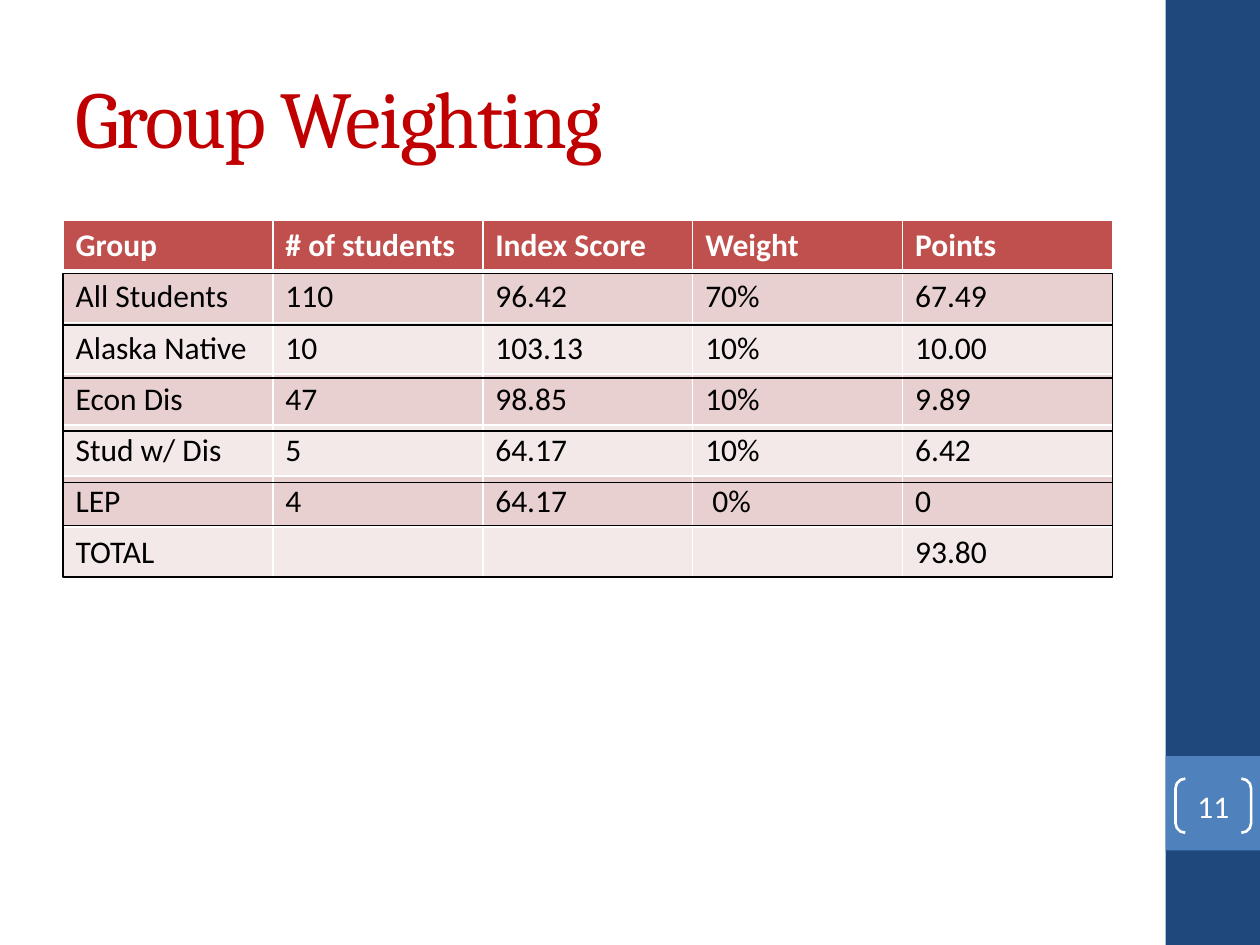
from itertools import pairwise

from lxml.etree import SubElement
from pptx import Presentation
from pptx.dml.color import RGBColor
from pptx.enum.shapes import MSO_SHAPE as Shape
from pptx.enum.text import MSO_ANCHOR as Anchor, PP_ALIGN as Align
from pptx.oxml import parse_xml
from pptx.oxml.ns import nsdecls, qn
from pptx.util import Inches, Pt

WHITE = RGBColor(0xFF, 0xFF, 0xFF)
BLACK = RGBColor(0x00, 0x00, 0x00)
NAVY = RGBColor(0x1F, 0x49, 0x7D)
BLUE = RGBColor(0x4F, 0x81, 0xBD)
TITLE_RED = RGBColor(0xC0, 0x00, 0x00)
HEADER_RED = RGBColor(0xC0, 0x50, 0x4D)
DARK_BAND = RGBColor(0xE8, 0xD0, 0xD0)
LIGHT_BAND = RGBColor(0xF4, 0xE9, 0xE9)

ROWS = [
    ["Group", "# of students", "Index Score", "Weight", "Points"],
    ["All Students", "110", "96.42", "70%", "67.49"],
    ["Alaska Native", "10", "103.13", "10%", "10.00"],
    ["Econ Dis", "47", "98.85", "10%", "9.89"],
    ["Stud w/ Dis", "5", "64.17", "10%", "6.42"],
    ["LEP", "4", "64.17", " 0%", "0"],
    ["TOTAL", "", "", "", "93.80"],
]
FRAME_EDGES = [2.17, 2.58, 3, 3.42, 3.83, 4.17, 4.58]


def style_text(para, font, size, color, bold=False):
    """Format every run of a paragraph."""
    for span in para.runs:
        span.font.name = font
        span.font.size = Pt(size)
        span.font.color.rgb = color
        span.font.bold = bold


def add_box(page, kind, left, top, width, height, fill=None, line=None, weight=0.75):
    """Add a preset shape with an optional fill and outline."""
    box = page.shapes.add_shape(
        kind, Inches(left), Inches(top), Inches(width), Inches(height)
    )
    box.shadow.inherit = False
    if fill is None:
        box.fill.background()
    else:
        box.fill.solid()
        box.fill.fore_color.rgb = fill
    if line is None:
        box.line.fill.background()
    else:
        box.line.color.rgb = line
        box.line.width = Pt(weight)
    return box


def add_sidebar(page, left, top, width, height):
    """Draw the side band and the square behind the page number."""
    add_box(page, Shape.RECTANGLE, left, top, width, height, NAVY)
    add_box(page, Shape.RECTANGLE, left, top + 6, width, width, BLUE)


def add_title(page, left, top, width, height):
    """Write the slide title."""
    box = page.shapes.add_textbox(
        Inches(left), Inches(top), Inches(width), Inches(height)
    )
    frame = box.text_frame
    frame.word_wrap = True
    frame.vertical_anchor = Anchor.MIDDLE
    frame.text = "Group Weighting"
    para = frame.paragraphs[0]
    style_text(para, "Cambria", 46, TITLE_RED)
    para.runs[0].font._element.set("spc", "-100")


def set_borders(cell, bottom):
    """Give a cell white borders, with its own bottom width in points."""
    properties = cell._tc.get_or_add_tcPr()
    widths = {"lnL": 1, "lnR": 1, "lnT": 1, "lnB": bottom}
    for index, (side, width) in enumerate(widths.items()):
        line = parse_xml(f'<a:{side} {nsdecls("a")} w="{Pt(width)}"/>')
        fill = SubElement(line, qn("a:solidFill"))
        SubElement(fill, qn("a:srgbClr"), val=str(WHITE))
        properties.insert(index, line)


def add_score_table(page, left, top, width, height):
    """Build the banded table of group scores."""
    table = page.shapes.add_table(
        len(ROWS), len(ROWS[0]),
        Inches(left), Inches(top), Inches(width), Inches(height),
    ).table
    for row, texts in enumerate(ROWS):
        header = row == 0
        band = HEADER_RED if header else DARK_BAND if row % 2 else LIGHT_BAND
        for column, text in enumerate(texts):
            cell = table.cell(row, column)
            cell.fill.solid()
            cell.fill.fore_color.rgb = band
            set_borders(cell, 3 if header else 1)
            if text:
                cell.text_frame.text = text
                color = WHITE if header else BLACK
                style_text(cell.text_frame.paragraphs[0], "Calibri", 18, color, header)


def add_page_number(page, left, top, width, height):
    """Write the page number between brackets."""
    box = add_box(page, Shape.DOUBLE_BRACKET, left, top, width, height, None, WHITE, 1.5)
    box.adjustments[0] = 0.18
    frame = box.text_frame
    frame.margin_left = frame.margin_right = 0
    frame.margin_top = frame.margin_bottom = 0
    frame.vertical_anchor = Anchor.MIDDLE
    frame.text = "11"
    para = frame.paragraphs[0]
    para.alignment = Align.CENTER
    style_text(para, "Calibri", 18, WHITE)


def add_row_frames(page, left, width, edges):
    """Outline each row below the header."""
    for top, bottom in pairwise(edges):
        add_box(page, Shape.RECTANGLE, left, top, width, bottom - top, line=BLACK)


def main():
    """Build and save the slide."""
    deck = Presentation()
    deck.slide_width = Inches(10)
    deck.slide_height = Inches(7.5)
    page = deck.slides.add_slide(deck.slide_layouts[6])
    page.background.fill.solid()
    page.background.fill.fore_color.rgb = WHITE
    add_sidebar(page, 9.25, 0, 0.75, 7.5)
    add_title(page, 0.5, 0.3, 8.33, 1.25)
    add_score_table(page, 0.5, 1.75, 8.33, 2.84)
    add_page_number(page, 9.33, 6.18, 0.6, 0.43)
    add_row_frames(page, 0.5, 8.33, FRAME_EDGES)
    deck.save("out.pptx")


if __name__ == "__main__":
    main()
